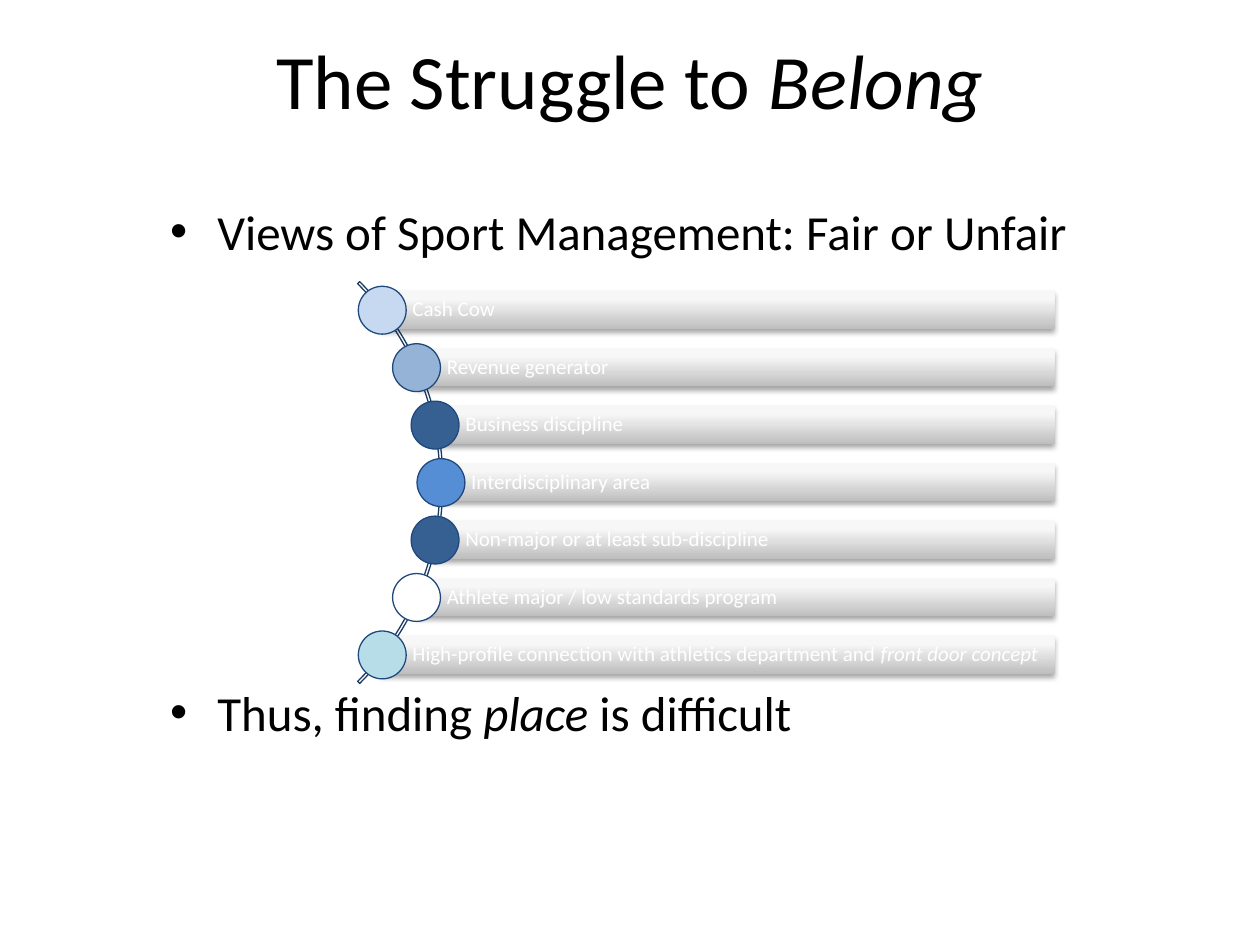
from math import sqrt

from lxml.etree import SubElement
from pptx import Presentation
from pptx.dml.color import RGBColor
from pptx.enum.shapes import MSO_SHAPE as SHAPE
from pptx.enum.text import MSO_ANCHOR as ANCHOR, MSO_AUTO_SIZE as AUTO, PP_ALIGN as ALIGN
from pptx.oxml.ns import qn
from pptx.util import Inches, Pt

BLACK = RGBColor(0, 0, 0)
WHITE = RGBColor(255, 255, 255)
NAVY = RGBColor(0x1F, 0x49, 0x7D)
ARC_LINE = RGBColor(0x19, 0x3A, 0x64)
BAR_DARK = RGBColor(0xBE, 0xBE, 0xBE)
BAR_LIGHT = RGBColor(0xF7, 0xF7, 0xF7)
PALE_BLUE = RGBColor(0xC6, 0xD9, 0xF1)
SOFT_BLUE = RGBColor(0x95, 0xB3, 0xD7)
DEEP_BLUE = RGBColor(0x37, 0x60, 0x92)
MID_BLUE = RGBColor(0x55, 0x8E, 0xD5)
AQUA = RGBColor(0xB7, 0xDE, 0xE8)

# Runs are (text, italic)
TITLE = [("The Struggle to ", False), ("Belong", True)]
BULLETS = [  # (space before in points, runs)
    (0, [("Views of Sport Management: Fair or Unfair", False)]),
    (241, [("Thus, finding ", False), ("place ", True), ("is difficult", False)]),
]
VIEWS = [
    (PALE_BLUE, [("Cash Cow", False)]),
    (SOFT_BLUE, [("Revenue generator", False)]),
    (DEEP_BLUE, [("Business discipline", False)]),
    (MID_BLUE, [("Interdisciplinary area", False)]),
    (DEEP_BLUE, [("Non-major or at least sub-discipline", False)]),
    (WHITE, [("Athlete major / low standards program", False)]),
    (AQUA, [("High-profile connection with athletics department and ", False),
            ("front door concept", True)]),
]

# Inches
ARC_X, ARC_Y, ARC_SIZE = 1.26, 3.83, 4.51
ORBIT = 2.24  # radius on which the circle centres lie
ROW_STEP = 0.456
BAR_RIGHT, BAR_H, DOT = 8.37, 0.3, 0.38


def place(s, x, y, w, h):
    s.left, s.top, s.width, s.height = (Inches(v) for v in (x, y, w, h))


def add_runs(p, runs, size, color):
    for text, italic in runs:
        r = p.add_run()
        r.text = text
        r.font.name, r.font.size, r.font.italic = "Calibri", Pt(size), italic
        r.font.color.rgb = color


def add_shape(shapes, kind, x, y, w, h):
    s = shapes.add_shape(kind, *(Inches(v) for v in (x, y, w, h)))
    s.shadow.inherit = False
    return s


def outline(s, color):
    s.line.color.rgb = color
    s.line.width = Pt(0.75)


def add_shadow(s):
    effects = s._element.spPr.find(qn("a:effectLst"))
    shadow = SubElement(effects, qn("a:outerShdw"), blurRad=str(Pt(3.1)),
                        dist=str(Pt(1.8)), dir="5400000", rotWithShape="0")
    color = SubElement(shadow, qn("a:srgbClr"), val=str(BLACK))
    SubElement(color, qn("a:alpha"), val="35000")


def add_bar(shapes, x, y, runs):
    s = add_shape(shapes, SHAPE.RECTANGLE, x, y - BAR_H / 2, BAR_RIGHT - x, BAR_H)
    s.line.fill.background()
    s.fill.gradient()
    s.fill.gradient_angle = 90
    for stop, pos, color in zip(s.fill.gradient_stops, (0, 0.8), (BAR_DARK, BAR_LIGHT)):
        stop.position, stop.color.rgb = pos, color
    add_shadow(s)
    tf = s.text_frame
    tf.word_wrap, tf.vertical_anchor = True, ANCHOR.MIDDLE
    tf.margin_left = Inches(0.24)
    tf.margin_right = tf.margin_top = tf.margin_bottom = Inches(0.03)
    p = tf.paragraphs[0]
    p.alignment, p.line_spacing = ALIGN.LEFT, 0.9
    add_runs(p, runs, 12, WHITE)


def add_views(shapes):
    arc = add_shape(shapes, SHAPE.BLOCK_ARC, ARC_X - ARC_SIZE / 2,
                    ARC_Y - ARC_SIZE / 2, ARC_SIZE, ARC_SIZE)
    for i, value in enumerate((189, 27, 0.005)):
        arc.adjustments[i] = value
    arc.fill.background()
    outline(arc, ARC_LINE)
    for i, (color, runs) in enumerate(VIEWS):
        dy = (i - (len(VIEWS) - 1) / 2) * ROW_STEP
        x, y = ARC_X + sqrt(ORBIT ** 2 - dy ** 2), ARC_Y + dy
        add_bar(shapes, x, y, runs)
        dot = add_shape(shapes, SHAPE.OVAL, x - DOT / 2, y - DOT / 2, DOT, DOT)
        dot.fill.solid()
        dot.fill.fore_color.rgb = color
        outline(dot, NAVY)


def main():
    prs = Presentation()
    prs.slide_width, prs.slide_height = Inches(10), Inches(7.5)
    slide = prs.slides.add_slide(prs.slide_layouts[1])
    title, body = slide.placeholders

    place(title, 0.5, 0, 9, 1.25)
    title.text_frame.vertical_anchor = ANCHOR.MIDDLE
    p = title.text_frame.paragraphs[0]
    p.alignment = ALIGN.CENTER
    add_runs(p, TITLE, 44, BLACK)

    place(body, 1.25, 1, 9, 5.08)
    tf = body.text_frame
    tf.auto_size, tf.margin_top = AUTO.NONE, Inches(0.6)
    for i, (space, runs) in enumerate(BULLETS):
        p = tf.add_paragraph() if i else tf.paragraphs[0]
        p.space_before = Pt(space)
        add_runs(p, runs, 28, BLACK)

    add_views(slide.shapes)
    prs.save("out.pptx")


if __name__ == "__main__":
    main()
